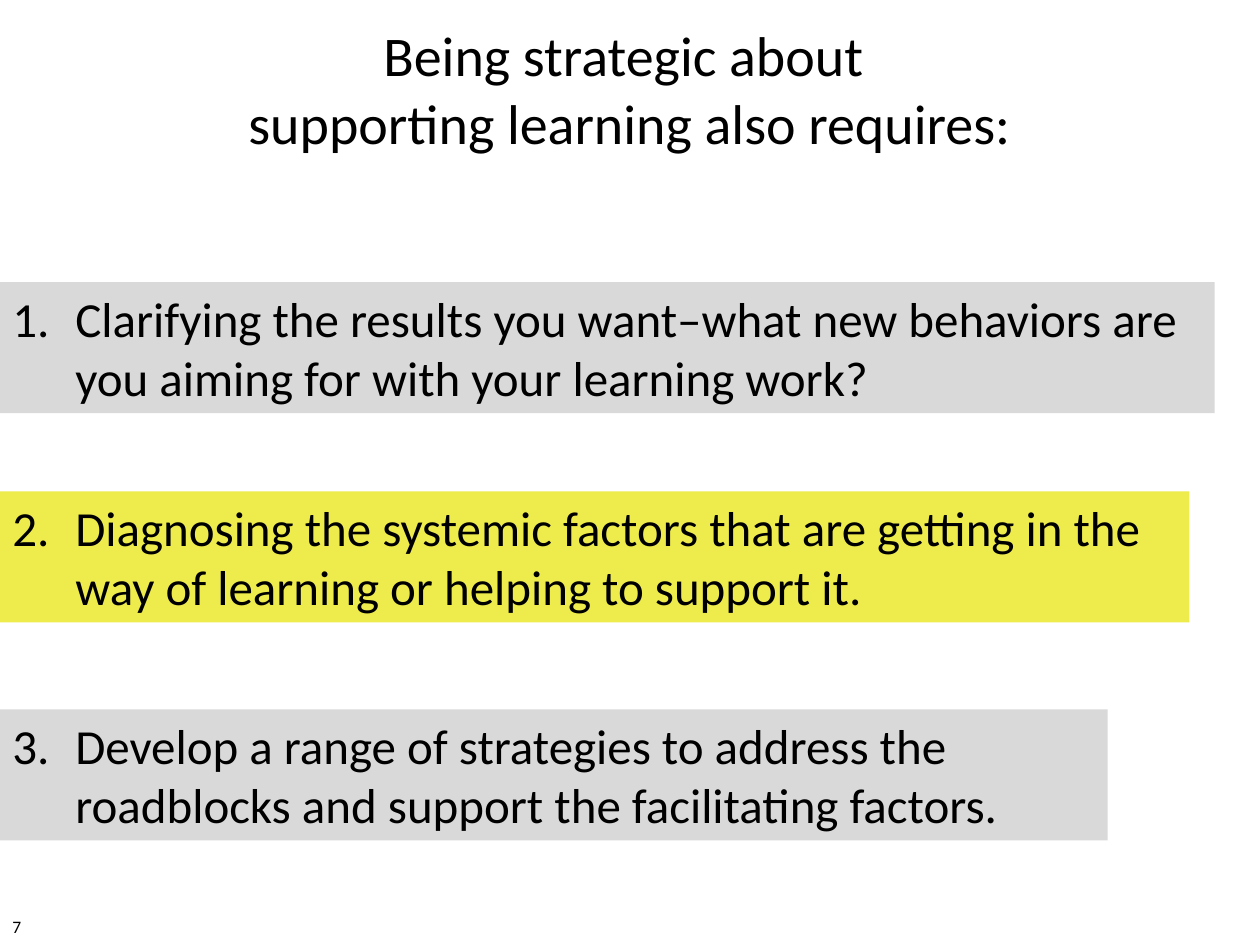
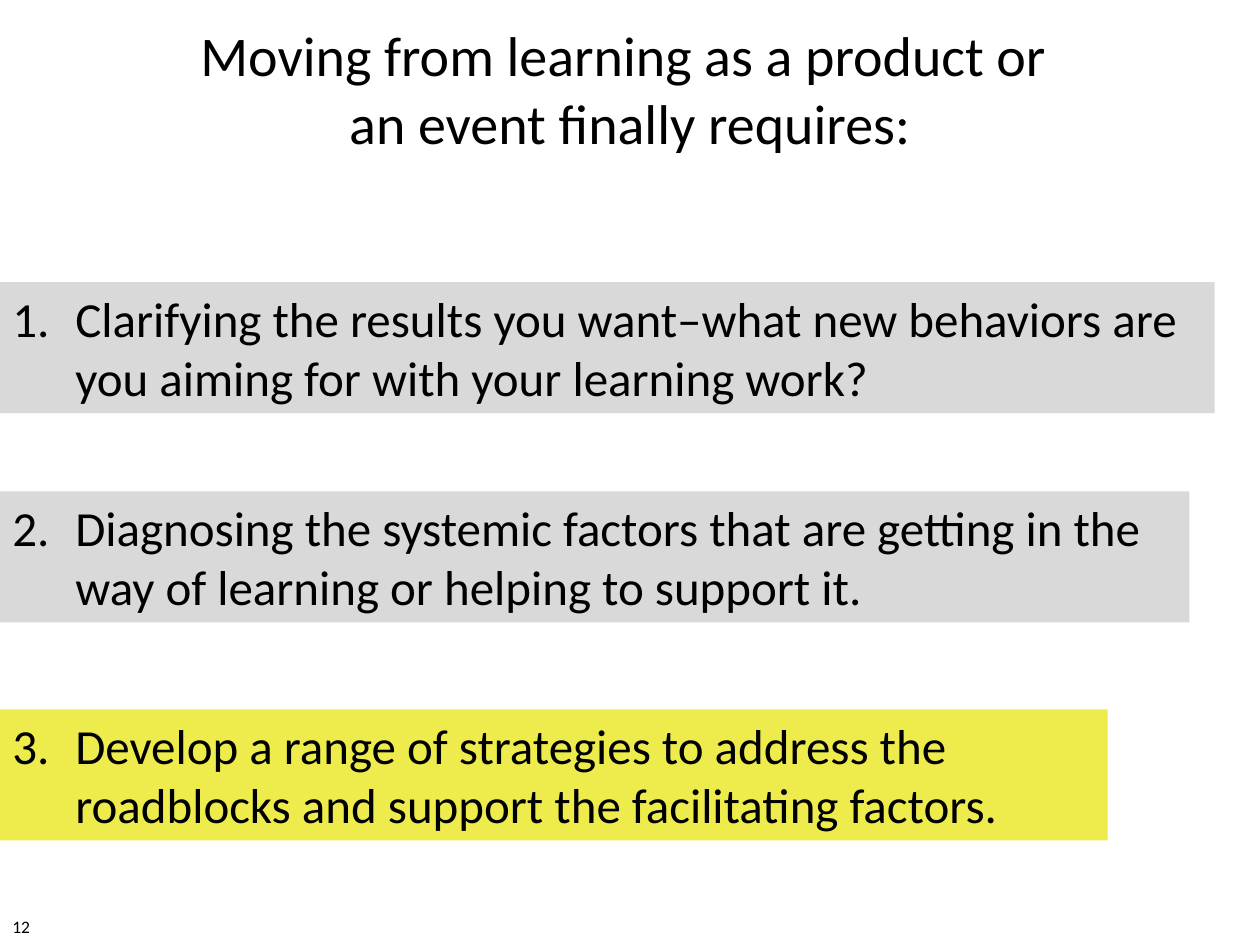
from dataclasses import dataclass

from lxml import etree
from pptx import Presentation, util as u
from pptx.dml.color import RGBColor
from pptx.enum import shapes, text
from pptx.oxml import ns


@dataclass(frozen=True)
class Theme:
    font: str = "Calibri"
    ink: str = "000000"
    band: str = "D9D9D9"
    highlight: str = "EEEC4C"
    title_size: int = 32
    step_size: int = 28
    number_size: int = 10


THEME = Theme()
WIDTH, HEIGHT = u.Inches(10), u.Inches(7.5)
HANGING = u.Inches(0.5)
BAND_HEIGHT = 1.04 / 7.5

STEPS = [
    (2.24 / 7.5, 0.964,
     "Clarifying the results you want–what new behaviors are you aiming for with your learning work?"),
    (3.9 / 7.5, 0.944,
     "Diagnosing the systemic factors that are getting in the way of learning or helping to support it."),
    (5.63 / 7.5, 0.879,
     "Develop a range of strategies to address the roadblocks and support the facilitating factors."),
]

SLIDES = [
    (("Being strategic about ", "supporting learning also requires:"), 2, "7"),
    (("Moving from learning as a product or ", "an event finally requires:"), 3, "12"),
]


def share_box(top, width, height):
    return 0, round(top * HEIGHT), round(width * WIDTH), round(height * HEIGHT)


def add_run(p, words, size):
    r = p.add_run()
    r.text = words
    r.font.name = THEME.font
    r.font.size = u.Pt(size)
    r.font.color.rgb = RGBColor.from_string(THEME.ink)


def add_textbox(s, box):
    tf = s.shapes.add_textbox(*box).text_frame
    tf.word_wrap = True
    return tf


def number_paragraph(p, start):
    pPr = p._p.get_or_add_pPr()
    pPr.set("marL", str(HANGING))
    pPr.set("indent", str(-HANGING))
    bullet = etree.SubElement(pPr, ns.qn("a:buAutoNum"))
    bullet.set("type", "arabicPeriod")
    bullet.set("startAt", str(start))


def add_title(s, box, lines):
    tf = add_textbox(s, box)
    tf.vertical_anchor = text.MSO_ANCHOR.MIDDLE
    p = tf.paragraphs[0]
    p.alignment = text.PP_ALIGN.CENTER
    for i, line in enumerate(lines):
        if i:
            p.add_line_break()
        add_run(p, line, THEME.title_size)


def add_step(s, box, number, words, fill):
    sp = s.shapes.add_shape(shapes.MSO_SHAPE.RECTANGLE, *box)
    sp.shadow.inherit = False
    sp.fill.solid()
    sp.fill.fore_color.rgb = RGBColor.from_string(fill)
    sp.line.fill.background()
    tf = sp.text_frame
    tf.word_wrap = True
    tf.vertical_anchor = text.MSO_ANCHOR.TOP
    tf.auto_size = text.MSO_AUTO_SIZE.SHAPE_TO_FIT_TEXT
    p = tf.paragraphs[0]
    p.alignment = text.PP_ALIGN.LEFT
    number_paragraph(p, number)
    add_run(p, words, THEME.step_size)


def add_page_number(s, box, number):
    add_run(add_textbox(s, box).paragraphs[0], number, THEME.number_size)


def add_steps_slide(prs, title, current, page):
    s = prs.slides.add_slide(prs.slide_layouts[6])
    add_title(s, share_box(0, 1, 1.4 / 7.5), title)
    for number, (top, width, words) in enumerate(STEPS, 1):
        fill = THEME.highlight if number == current else THEME.band
        add_step(s, share_box(top, width, BAND_HEIGHT), number, words, fill)
    add_page_number(s, share_box(7.22 / 7.5, 0.071, 0.28 / 7.5), page)


def main():
    prs = Presentation()
    prs.slide_width, prs.slide_height = WIDTH, HEIGHT
    for title, current, page in SLIDES:
        add_steps_slide(prs, title, current, page)
    prs.save("out.pptx")


if __name__ == "__main__":
    main()
